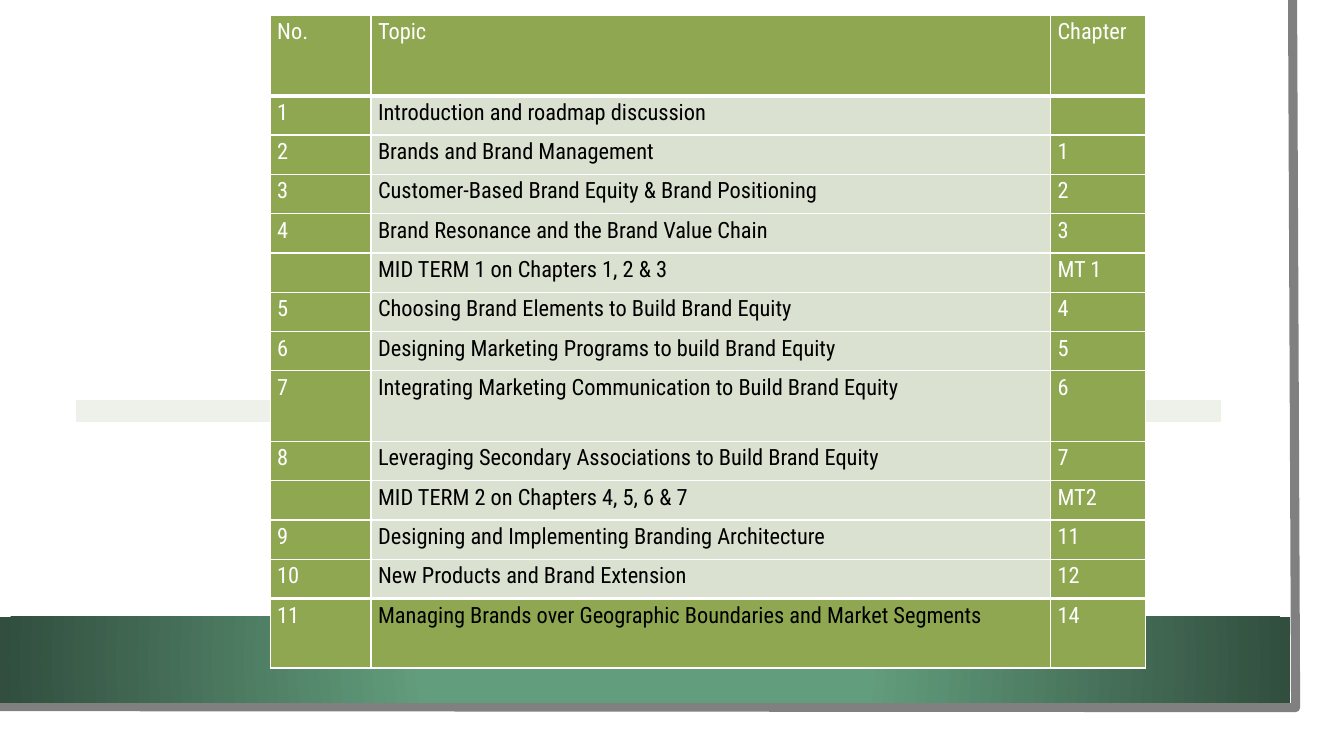
from lxml import etree
from pptx import Presentation
from pptx.dml import color
from pptx.enum import shapes
from pptx.oxml import parse_xml
from pptx.oxml import ns
from pptx.util import Inches, Pt

FONT = "Roboto Condensed"
GREEN, PALE, STRIP, WHITE, BLACK = "8FA751", "DBE1D0", "EEF1E9", "FFFFFF", "000000"
SCHEDULE = [
    ("No.", "Topic", "Chapter"),
    ("1", "Introduction and roadmap discussion", ""),
    ("2", "Brands and Brand Management", "1"),
    ("3", "Customer-Based Brand Equity & Brand Positioning", "2"),
    ("4", "Brand Resonance and the Brand Value Chain", "3"),
    ("", "MID TERM 1 on Chapters 1, 2 & 3", "MT 1"),
    ("5", "Choosing Brand Elements to Build Brand Equity", "4"),
    ("6", "Designing Marketing Programs to build Brand Equity", "5"),
    ("7", "Integrating Marketing Communication to Build Brand Equity", "6"),
    ("8", "Leveraging Secondary Associations to Build Brand Equity", "7"),
    ("", "MID TERM 2 on Chapters 4, 5, 6 & 7", "MT2"),
    ("9", "Designing and Implementing Branding Architecture", "11"),
    ("10", "New Products and Brand Extension", "12"),
    ("11", "Managing Brands over Geographic Boundaries and Market Segments", "14"),
]
LAST = len(SCHEDULE) - 1
ROW_HEIGHT = 0.39
TALL_ROWS = {0: 0.8, 8: 0.7, LAST: 0.69}


def rgb(value):
    """Return the colour for a hex string."""
    return color.RGBColor.from_string(value)


def add_page_edge(slide):
    """Draw the grey edge along the right and bottom of the page."""
    builder = slide.shapes.build_freeform(1282, 0, scale=Inches(0.01))
    builder.add_line_segments([(1285, 702), (-3, 701)], close=False)
    edge = builder.convert_to_shape()
    edge.shadow.inherit = False
    edge.fill.background()
    edge.line.color.rgb = rgb("808080")
    edge.line.width = Pt(6.5)


def add_footer_band(slide):
    """Draw the footer band with its radial gradient."""
    band = slide.shapes.add_shape(
        shapes.MSO_SHAPE.RECTANGLE, 0, Inches(6.12), Inches(12.8), Inches(0.85))
    band.shadow.inherit = False
    band.line.fill.background()
    gradient = parse_xml(
        f'<a:gradFill {ns.nsdecls("a")} rotWithShape="1"><a:gsLst>'
        '<a:gs pos="34000"><a:srgbClr val="629D7D"/></a:gs>'
        '<a:gs pos="100000"><a:srgbClr val="314E3E"/></a:gs></a:gsLst>'
        '<a:path path="circle"><a:fillToRect l="50000" t="50000" r="50000" b="50000"/>'
        '</a:path></a:gradFill>')
    band.element.spPr.find(ns.qn("a:prstGeom")).addnext(gradient)


def write(cell, content, size=16, ink=WHITE, line_spacing=1.15, after=10):
    """Write formatted text in a cell, sizing the line even when it is empty."""
    paragraph = cell.text_frame.paragraphs[0]
    paragraph.line_spacing = line_spacing
    paragraph.space_after = Pt(after)
    if content:
        run = paragraph.add_run()
        run.text = content
        run.font.name, run.font.size = FONT, Pt(size)
        run.font.color.rgb = rgb(ink)
    else:
        etree.SubElement(paragraph._p, ns.qn("a:endParaRPr"), sz=str(size * 100))


def style_cell(cell, fill, top=1, bottom=1, inset=0.07):
    """Set the insets, white borders and fill of a cell."""
    cell.margin_left = cell.margin_right = Inches(inset)
    cell.margin_top = cell.margin_bottom = 0
    properties = cell._tc.get_or_add_tcPr()
    for side, width in (("L", 1), ("R", 1), ("T", top), ("B", bottom)):
        properties.append(parse_xml(
            f'<a:ln{side} {ns.nsdecls("a")} w="{Pt(width)}"><a:solidFill>'
            f'<a:srgbClr val="{WHITE}"/></a:solidFill></a:ln{side}>'))
    cell.fill.solid()
    cell.fill.fore_color.rgb = rgb(fill)


def add_grid(slide, left, top, widths, heights):
    """Add a table with the given column widths and row heights."""
    grid = slide.shapes.add_table(
        len(heights), len(widths), Inches(left), Inches(top),
        Inches(sum(widths)), Inches(sum(heights))).table
    for column, width in zip(grid.columns, widths):
        column.width = Inches(width)
    for row, height in zip(grid.rows, heights):
        row.height = Inches(height)
    return grid


def add_strip(slide):
    """Add the pale one-cell strip behind the schedule."""
    cell = add_grid(slide, 0.75, 3.96, [11.37], [0.23]).cell(0, 0)
    style_cell(cell, STRIP)
    write(cell, "", size=8, line_spacing=1, after=0)


def add_schedule(slide):
    """Add the table of topics and chapters."""
    heights = [TALL_ROWS.get(row, ROW_HEIGHT) for row in range(len(SCHEDULE))]
    schedule = add_grid(slide, 2.68, 0.15, [1, 6.74, 0.94], heights)
    for row, entries in enumerate(SCHEDULE):
        for column, entry in enumerate(entries):
            is_topic = column == 1 and row > 0
            cell = schedule.cell(row, column)
            style_cell(cell, PALE if is_topic and row < LAST else GREEN,
                       top=3 if row in (1, LAST) else 1,
                       bottom=3 if row in (0, LAST - 1) else 1)
            write(cell, entry, ink=BLACK if is_topic else WHITE)


def main():
    """Build and save the slide."""
    deck = Presentation()
    deck.slide_width, deck.slide_height = Inches(13.33), Inches(7.5)
    slide = deck.slides.add_slide(deck.slide_layouts[6])
    add_page_edge(slide)
    add_footer_band(slide)
    add_strip(slide)
    add_schedule(slide)
    deck.save("out.pptx")


if __name__ == "__main__":
    main()
